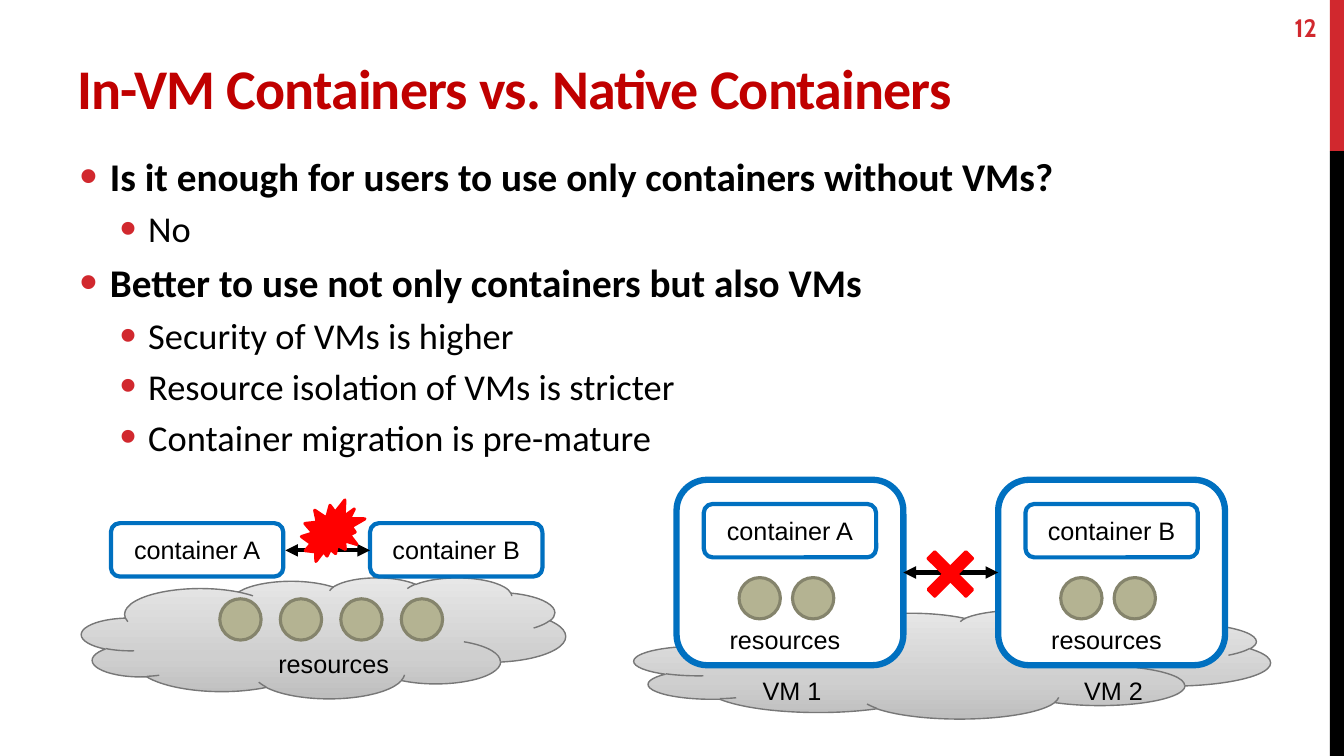
from copy import deepcopy

from lxml import etree
from pptx import Presentation
from pptx import util as u
from pptx.dml.color import RGBColor
from pptx.enum import shapes, text
from pptx.oxml.ns import qn

SHAPE = shapes.MSO_SHAPE
RED, BLACK, WHITE, BLUE = "D1282E", "000000", "FFFFFF", "0070C0"
ALERT = "FF0000"
CLOUD_STOPS = [(0, "BEBEBE"), (0.35, "CFCFCF"), (1, "E7E7E7")]
BODY = [
    (0, "Is it enough for users to use only containers without VMs?"),
    (1, "No"),
    (0, "Better to use not only containers but also VMs"),
    (1, "Security of VMs is higher"),
    (1, "Resource isolation of VMs is stricter"),
    (1, "Container migration is pre-mature"),
]
LEVELS = [
    {"size": 28, "bold": True, "before": 6, "margin": 0.3, "indent": -0.3},
    {"size": 26, "bold": False, "before": 5.2, "margin": 0.68, "indent": -0.28},
]


def color(hex_value):
    return RGBColor.from_string(hex_value)


def write(paragraph, words, size=18, name="Arial", hex_value=BLACK, bold=False):
    run = paragraph.add_run()
    run.text = words
    for key, value in {"size": u.Pt(size), "name": name, "bold": bold}.items():
        setattr(run.font, key, value)
    run.font.color.rgb = color(hex_value)
    return run


def add_shape(slide, kind, box, fill=None, line=None, width=1):
    shape = slide.shapes.add_shape(kind, *map(u.Inches, box))
    shape.shadow.inherit = False
    if fill:
        shape.fill.solid()
        shape.fill.fore_color.rgb = color(fill)
    if line:
        shape.line.color.rgb = color(line)
        shape.line.width = u.Pt(width)
    else:
        shape.line.fill.background()
    return shape


def add_text_frame(slide, box, **formats):
    frame = slide.shapes.add_textbox(*map(u.Inches, box)).text_frame
    for key, value in {"word_wrap": True, **formats}.items():
        setattr(frame, key, value)
    return frame


def add_label(slide, words, center, top):
    """Centre one line of unwrapped text on a vertical axis."""
    frame = add_text_frame(slide, (center - 0.65, top, 1.3, 0.4), word_wrap=False)
    frame.paragraphs[0].alignment = text.PP_ALIGN.CENTER
    write(frame.paragraphs[0], words)


def add_cloud(slide, box):
    cloud = add_shape(slide, SHAPE.CLOUD, box, line="777777")
    cloud.fill.gradient()
    cloud.fill.gradient_angle = 90
    stop_list = cloud.element.spPr.find(qn("a:gradFill")).find(qn("a:gsLst"))
    stop_list.insert(1, deepcopy(stop_list[0]))
    for stop, (position, hex_value) in zip(cloud.fill.gradient_stops, CLOUD_STOPS):
        stop.position = position
        stop.color.rgb = color(hex_value)


def add_container(slide, letter, left, top):
    box = (left, top, 1.71, 0.53)
    shape = add_shape(slide, SHAPE.ROUNDED_RECTANGLE, box, WHITE, BLUE, 3)
    shape.text_frame.vertical_anchor = text.MSO_ANCHOR.MIDDLE
    paragraph = shape.text_frame.paragraphs[0]
    paragraph.alignment = text.PP_ALIGN.CENTER
    write(paragraph, f"container {letter}")


def add_resources(slide, left, top, count, pitch):
    for index in range(count):
        box = (left + index * pitch, top, 0.41, 0.41)
        add_shape(slide, SHAPE.OVAL, box, "B4B392", "85846C", 2.25)


def add_double_arrow(slide, start, end, y):
    arrow = slide.shapes.add_connector(
        shapes.MSO_CONNECTOR.STRAIGHT, *map(u.Inches, (start, y, end, y)))
    arrow.line.color.rgb = color(BLACK)
    arrow.line.width = u.Pt(3)
    for tag in ("a:headEnd", "a:tailEnd"):
        etree.SubElement(arrow.line._get_or_add_ln(), qn(tag), type="triangle")
    etree.SubElement(arrow.element.spPr, qn("a:effectLst"))


def add_side_bar(slide, left, width):
    add_shape(slide, SHAPE.RECTANGLE, (left, 0, width, 1.5), RED)
    add_shape(slide, SHAPE.RECTANGLE, (left, 1.5, width, 6), BLACK)


def add_title(slide, box):
    frame = add_text_frame(slide, box, vertical_anchor=text.MSO_ANCHOR.BOTTOM)
    run = write(frame.paragraphs[0], "In-VM Containers vs. Native Containers",
                40, "Calibri", "C00000", True)
    run.font._element.set("spc", "-60")


def add_page_number(slide, box):
    frame = add_text_frame(slide, box, vertical_anchor=text.MSO_ANCHOR.MIDDLE)
    frame.paragraphs[0].alignment = text.PP_ALIGN.RIGHT
    write(frame.paragraphs[0], "12", 18, "Cabin", RED, True)


def add_bullet(paragraph, margin, indent):
    properties = paragraph._p.get_or_add_pPr()
    properties.set("marL", str(u.Inches(margin)))
    properties.set("indent", str(u.Inches(indent)))
    bullet_color = etree.SubElement(properties, qn("a:buClr"))
    etree.SubElement(bullet_color, qn("a:srgbClr"), val=RED)
    etree.SubElement(properties, qn("a:buSzPct"), val="130000")
    etree.SubElement(properties, qn("a:buFont"), typeface="Arial")
    etree.SubElement(properties, qn("a:buChar"), char="•")


def add_body(slide, box):
    frame = add_text_frame(slide, box, margin_left=u.Inches(0.12),
                           margin_right=u.Inches(0.12))
    for index, (level, words) in enumerate(BODY):
        paragraph = frame.add_paragraph() if index else frame.paragraphs[0]
        style = LEVELS[level]
        paragraph.level = level
        paragraph.space_before = u.Pt(style["before"])
        add_bullet(paragraph, style["margin"], style["indent"])
        write(paragraph, words, style["size"], "Calibri", BLACK, style["bold"])


def add_native_diagram(slide, left, top):
    """Two containers that clash over one shared pool of resources."""
    add_cloud(slide, (left, top + 0.77, 4.8, 1.2))
    for index, letter in enumerate("AB"):
        add_container(slide, letter, left + 0.29 + index * 2.57, top + 0.23)
    add_resources(slide, left + 1.37, top + 0.98, 4, 0.6)
    add_label(slide, "resources", left + 2.5, top + 1.42)
    add_double_arrow(slide, left + 2.02, left + 2.86, top + 0.5)
    add_shape(slide, SHAPE.EXPLOSION2, (left + 2.18, top, 0.63, 0.61),
              ALERT, ALERT, 2.25)


def add_vm(slide, letter, number, left, top):
    width = 2.25
    center = left + width / 2
    add_shape(slide, SHAPE.ROUNDED_RECTANGLE, (left, top, width, 1.84),
              WHITE, BLUE, 4.5)
    add_container(slide, letter, left + 0.27, top + 0.24)
    add_resources(slide, left + 0.62, top + 0.97, 2, 0.53)
    add_label(slide, "resources", center - 0.05, top + 1.38)
    add_label(slide, f"VM {number}", center + 0.02, top + 1.89)


def add_vm_diagram(slide, left, top):
    """Two isolated VMs, each with its own container and resources."""
    add_cloud(slide, (left, top + 1.29, 6.31, 1.08))
    for index, letter in enumerate("AB"):
        add_vm(slide, letter, index + 1, left + 0.42 + index * 3.19, top)
    add_double_arrow(slide, left + 2.67, left + 3.61, top + 0.92)
    cross = add_shape(slide, SHAPE.CROSS, (left + 2.87, top + 0.67, 0.53, 0.53),
                      ALERT, ALERT, 2.25)
    cross.adjustments[0] = 0.413
    cross.rotation = 45


def main():
    presentation = Presentation()
    presentation.slide_width = u.Inches(13.33)
    presentation.slide_height = u.Inches(7.5)
    slide = presentation.slides.add_slide(presentation.slide_layouts[6])
    add_side_bar(slide, 13.19, 0.16)
    add_title(slide, (0.67, 0.17, 12.02, 1.08))
    add_body(slide, (0.67, 1.46, 12.02, 5.64))
    add_page_number(slide, (12.16, 0.07, 1, 0.4))
    add_vm_diagram(slide, 6.29, 4.76)
    add_native_diagram(slide, 0.81, 4.96)
    presentation.save("out.pptx")


if __name__ == "__main__":
    main()
